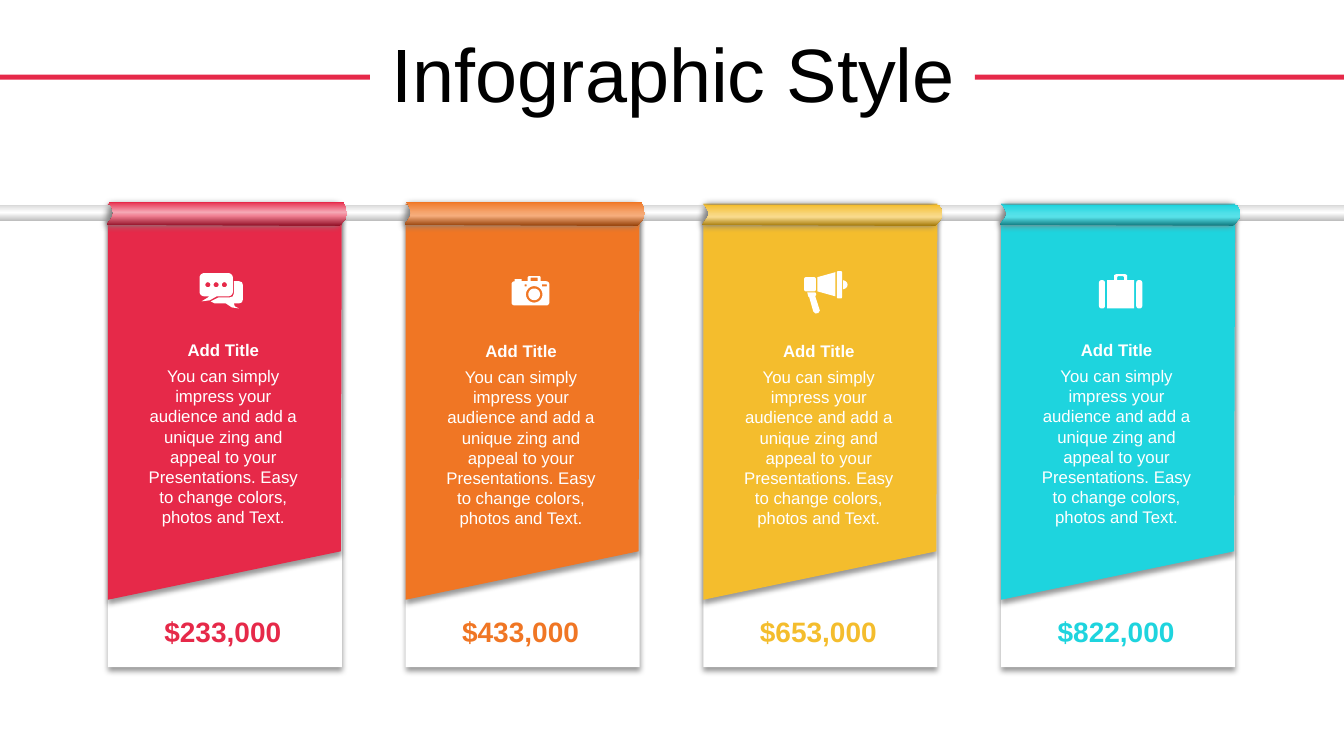
from math import cos, pi, sin

from lxml.etree import SubElement
from pptx import Presentation
from pptx.dml.color import RGBColor as Rgb
from pptx.enum.shapes import MSO_SHAPE as Kind
from pptx.enum.text import MSO_ANCHOR as Anchor, MSO_AUTO_SIZE as Fit, PP_ALIGN as Align
from pptx.oxml.ns import qn
from pptx.util import Inches, Pt

HEX = {
    "black": "000000", "white": "FFFFFF", "gray": "808080",
    "red": "E62949", "orange": "F07624", "gold": "F4BD2D", "cyan": "1ED4DE",
}
ROD = [(0, "BFBFBF"), (50, "FFFFFF"), (100, "D9D9D9")]
SHEEN = {
    "red": [(0, "921127"), (41, "F07F92"), (56, "F5A9B6"), (100, "E62949")],
    "orange": [(0, "96420A"), (41, "F6AD7C"), (56, "F5A56E"), (100, "F07624")],
    "gold": [(0, "A57A09"), (41, "F9DB8E"), (56, "F8D67D"), (100, "F4BD2D")],
    "cyan": [(1, "117B81"), (41, "57E1E8"), (56, "52E0E8"), (100, "1ED4DE")],
}
BODY = ("You can simply impress your audience and add a unique zing and appeal "
        "to your Presentations. Easy to change colors, photos and Text.")

# Cards: color, amount, icon, icon left in card, icon top, roll top, text shift
CARDS = [
    ("red", "$233,000", "chat", 0.91, 2.71, 2.00, 0),
    ("orange", "$433,000", "camera", 1.05, 2.74, 2.00, 0.01),
    ("gold", "$653,000", "horn", 1.00, 2.69, 2.03, 0.01),
    ("cyan", "$822,000", "case", 0.97, 2.72, 2.03, 0),
]
LEFT, STEP, WIDE = 1.07, (9.93 - 1.07) / 3, 2.32


# Outlines as lists of points
def box(x, y, w, h, r=0.0):
    """Rectangle with corners of radius r."""
    if not r:
        return [(x, y), (x + w, y), (x + w, y + h), (x, y + h)]
    mids = [(x + w - r, y + h - r), (x + r, y + h - r), (x + r, y + r), (x + w - r, y + r)]
    return [(cx + r * cos((q + k / 6) * pi / 2), cy + r * sin((q + k / 6) * pi / 2))
            for q, (cx, cy) in enumerate(mids) for k in range(7)]


def dot(x, y, r):
    return box(x - r, y - r, 2 * r, 2 * r, r)


def curve(a, b, c, d, n=12):
    """Points along a cubic curve."""
    return [tuple((1 - t) ** 3 * p + 3 * (1 - t) ** 2 * t * q
                  + 3 * (1 - t) * t * t * u + t ** 3 * v
                  for p, q, u, v in zip(a, b, c, d))
            for t in (k / n for k in range(n + 1))]


# Icons in hundredths of an inch; inner outlines are holes
ICONS = {
    "chat": [
        box(0, 0, 33, 23, 4.5),
        [(17, 23), (10, 27), (2, 28), (10, 23)],
        [(34, 8), (39, 8), (42, 9), (43, 12), (43, 26), (42, 29), (39, 30),
         (34, 30), (35, 33), (39, 35), (32, 34), (26, 30), (15, 30), (11, 28),
         (19, 24), (30, 24), (33, 23), (34, 20)],
        *[dot(x, 11.5, 2.5) for x in (8.2, 16.4, 24.6)],
    ],
    "camera": [
        box(0, 5, 37.5, 24, 3), box(3, 3, 7, 2),
        [(16, 5), (16, 1), (17, 0), (28, 0), (29, 1), (29, 5),
         (26, 5), (26, 1.5), (19, 1.5), (19, 5)],
        box(13, 8, 2, 2), box(30, 8, 5, 2), dot(22.5, 18, 8.2), dot(22.5, 18, 5.8),
    ],
    "horn": [
        box(0, 6, 11.5, 14, 1.5), [(13, 6), (31, 1), (31, 25), (13, 20)],
        box(32.5, 0, 5, 27, 1),
        [(3, 21), (11, 21), (12, 23), (11, 25), (15.5, 39), (14, 41.5),
         (11, 42), (9, 40), (5, 26), (4, 25)],
        curve((38.5, 9), (44.5, 10), (44.5, 17), (38.5, 18)),
    ],
    "case": [
        box(0, 6, 6, 28, 2.5), box(8, 6, 27, 28), box(37, 6, 6, 28, 2.5),
        [(15, 6), (15, 1), (17, 0), (26, 0), (28, 1), (28, 6),
         (25, 6), (25, 3), (24, 2), (19, 2), (18, 3), (18, 6)],
    ],
}


# Drawing
def paint(shape, fill):
    """Fill with a named color, or with a list of stops from the bottom up."""
    shape.shadow.inherit = False
    shape.line.fill.background()
    if isinstance(fill, str):
        shape.fill.solid()
        shape.fill.fore_color.rgb = Rgb.from_string(HEX[fill])
        return shape
    shape.fill.gradient()
    shape.fill.gradient_angle = 90
    stops = next(shape._element.iter(qn("a:gsLst")))
    stops.clear()
    for pos, tint in fill:
        stop = SubElement(stops, qn("a:gs"), pos=str(pos * 1000))
        SubElement(stop, qn("a:srgbClr"), val=tint)
    return shape


def block(slide, x, y, w, h, fill):
    return paint(slide.shapes.add_shape(
        Kind.RECTANGLE, Inches(x), Inches(y), Inches(w), Inches(h)), fill)


def shape(slide, x, y, rings, fill, unit=1.0):
    """One freeform from closed outlines, measured from x, y."""
    pen = None
    for ring in rings:
        pts = [(Inches(x + a * unit), Inches(y + b * unit)) for a, b in ring]
        if pen is None:
            pen = slide.shapes.build_freeform(*pts[0], scale=1.0)
        else:
            pen.move_to(*pts[0])
        pen.add_line_segments(pts[1:], close=True)
    return paint(pen.convert_to_shape(), fill)


def shade(item):
    """Soft shadow straight below."""
    effects = item._element.spPr.find(qn("a:effectLst"))
    drop = SubElement(effects, qn("a:outerShdw"), blurRad=str(Pt(4)),
                      dist=str(Pt(3)), dir="5400000", algn="t", rotWithShape="0")
    tint = SubElement(drop, qn("a:srgbClr"), val=HEX["black"])
    SubElement(tint, qn("a:alpha"), val="40000")


def blur(item):
    effects = item._element.spPr.find(qn("a:effectLst"))
    SubElement(effects, qn("a:softEdge"), rad=str(Pt(5)))


def write(frame, text, size=12, color="white", bold=False, anchor=Anchor.TOP):
    frame.word_wrap = True
    frame.auto_size = Fit.NONE
    frame.vertical_anchor = anchor
    para = frame.paragraphs[0]
    para.alignment = Align.CENTER
    run = para.add_run()
    run.text = text
    run.font.name, run.font.size, run.font.bold = "Arial", Pt(size), bold
    run.font.color.rgb = Rgb.from_string(HEX[color])
    return para


def label(slide, x, y, w, h, text, **form):
    area = slide.shapes.add_textbox(Inches(x), Inches(y), Inches(w), Inches(h))
    write(area.text_frame, text, **form)


# Parts of the slide
def head(slide):
    for x in (0, 9.67):
        block(slide, x, 0.74, 3.67, 0.05, "red")
    title = slide.shapes.title
    title.left, title.top = Inches(0.35), Inches(0.31)
    title.width, title.height = Inches(12.66), Inches(0.92)
    para = write(title.text_frame, "Infographic Style", size=54, color="black",
                 anchor=Anchor.MIDDLE)
    para.line_spacing, para.space_before = 0.9, Pt(10)


def panel(slide, x, color):
    shade(block(slide, x, 2.01, WIDE, 4.61, "white"))
    flag = [(0, 0), (WIDE, 0), (2.31, 3.45), (0, 3.93)]
    shade(shape(slide, x, 2.02, [flag], color))


def roll(slide, x, top, color):
    dark = (curve((2.34, 1.96), (2.42, 2.08), (2.45, 2.19), (2.34, 2.31))
            + curve((-0.12, 2.31), (-0.07, 2.18), (-0.09, 2.08), (-0.04, 1.96)))
    blur(shape(slide, x, 0, [dark], "gray"))
    tube = (curve((2.33, top), (2.4, 2.13), (2.38, 2.15), (2.3, 2.24))
            + curve((-0.01, 2.23), (0.04, 2.15), (0.09, 2.14), (0.01, top)))
    shape(slide, x, 0, [tube], SHEEN[color])


def main():
    deck = Presentation()
    deck.slide_width, deck.slide_height = Inches(13.33), Inches(7.5)
    slide = deck.slides.add_slide(deck.slide_layouts[5])
    head(slide)
    row = [(LEFT + i * STEP, *card) for i, card in enumerate(CARDS)]
    for x, color, *_ in row:
        panel(slide, x, color)
    # Rod lies over the panels and under the rolls
    block(slide, 0, 2.03, 13.33, 0.16, ROD)
    for x, color, cost, icon, dx, y, top, drop in row:
        roll(slide, x, top, color)
        label(slide, x + 0.25, 3.58 + drop, 1.79, 1.72, BODY)
        label(slide, x + 0.25, 3.32 + drop, 1.79, 0.3, "Add Title", bold=True)
        label(slide, x + 0.18, 6.05, 1.92, 0.44, cost, size=20, color=color, bold=True)
        shape(slide, x + dx, y, ICONS[icon], "white", unit=0.01)
    deck.save("out.pptx")


if __name__ == "__main__":
    main()
